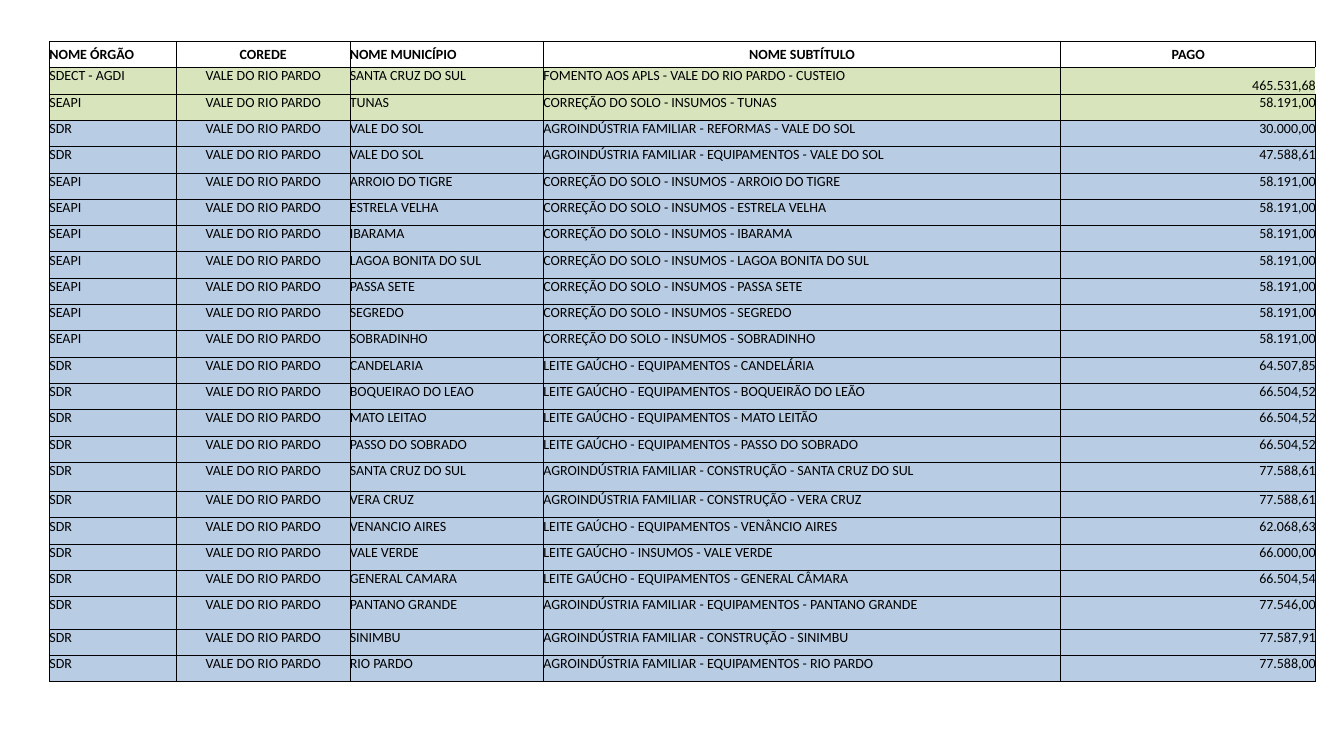
from lxml.etree import SubElement
from pptx import Presentation
from pptx.dml.color import RGBColor
from pptx.enum.text import MSO_ANCHOR, PP_ALIGN
from pptx.oxml.ns import qn
from pptx.util import Inches, Pt

BLACK, WHITE, GREEN, BLUE = "000000", "FFFFFF", "D7E4BC", "B8CCE4"
LEFT, CENTER, RIGHT = PP_ALIGN.LEFT, PP_ALIGN.CENTER, PP_ALIGN.RIGHT
TOP, MIDDLE, BOTTOM = MSO_ANCHOR.TOP, MSO_ANCHOR.MIDDLE, MSO_ANCHOR.BOTTOM

COREDE = "VALE DO RIO PARDO"
SOLO = "CORREÇÃO DO SOLO - INSUMOS - "
LEITE = "LEITE GAÚCHO - EQUIPAMENTOS - "
AGRO = "AGROINDÚSTRIA FAMILIAR - "

HEADERS = ["NOME ÓRGÃO", "COREDE", "NOME MUNICÍPIO", "NOME SUBTÍTULO", "PAGO"]
PAYMENTS = [
    ("SDECT - AGDI", "SANTA CRUZ DO SUL", "FOMENTO AOS APLS - VALE DO RIO PARDO - CUSTEIO", "465.531,68"),
    ("SEAPI", "TUNAS", SOLO + "TUNAS", "58.191,00"),
    ("SDR", "VALE DO SOL", AGRO + "REFORMAS - VALE DO SOL", "30.000,00"),
    ("SDR", "VALE DO SOL", AGRO + "EQUIPAMENTOS - VALE DO SOL", "47.588,61"),
    ("SEAPI", "ARROIO DO TIGRE", SOLO + "ARROIO DO TIGRE", "58.191,00"),
    ("SEAPI", "ESTRELA VELHA", SOLO + "ESTRELA VELHA", "58.191,00"),
    ("SEAPI", "IBARAMA", SOLO + "IBARAMA", "58.191,00"),
    ("SEAPI", "LAGOA BONITA DO SUL", SOLO + "LAGOA BONITA DO SUL", "58.191,00"),
    ("SEAPI", "PASSA SETE", SOLO + "PASSA SETE", "58.191,00"),
    ("SEAPI", "SEGREDO", SOLO + "SEGREDO", "58.191,00"),
    ("SEAPI", "SOBRADINHO", SOLO + "SOBRADINHO", "58.191,00"),
    ("SDR", "CANDELARIA", LEITE + "CANDELÁRIA", "64.507,85"),
    ("SDR", "BOQUEIRAO DO LEAO", LEITE + "BOQUEIRÃO DO LEÃO", "66.504,52"),
    ("SDR", "MATO LEITAO", LEITE + "MATO LEITÃO", "66.504,52"),
    ("SDR", "PASSO DO SOBRADO", LEITE + "PASSO DO SOBRADO", "66.504,52"),
    ("SDR", "SANTA CRUZ DO SUL", AGRO + "CONSTRUÇÃO - SANTA CRUZ DO SUL", "77.588,61"),
    ("SDR", "VERA CRUZ", AGRO + "CONSTRUÇÃO - VERA CRUZ", "77.588,61"),
    ("SDR", "VENANCIO AIRES", LEITE + "VENÂNCIO AIRES", "62.068,63"),
    ("SDR", "VALE VERDE", "LEITE GAÚCHO - INSUMOS - VALE VERDE", "66.000,00"),
    ("SDR", "GENERAL CAMARA", LEITE + "GENERAL CÂMARA", "66.504,54"),
    ("SDR", "PANTANO GRANDE", AGRO + "EQUIPAMENTOS - PANTANO GRANDE", "77.546,00"),
    ("SDR", "SINIMBU", AGRO + "CONSTRUÇÃO - SINIMBU", "77.587,91"),
    ("SDR", "RIO PARDO", AGRO + "EQUIPAMENTOS - RIO PARDO", "77.588,00"),
]
COL_WIDTHS = [1.26, 1.72, 1.92, 5.13, 2.53]
TABLE_HEIGHT = 6.36
TALL_ROWS = {16: 0.29, 21: 0.32}
GREEN_ROWS = 2


def rgb(color):
    return RGBColor.from_string(color)


class SlideBuilder:
    font, size, border = "Calibri", Pt(10), Pt(0.5)

    def __init__(self, prs):
        self.s = prs.slides.add_slide(prs.slide_layouts[6])

    def table(self, left, top, widths, heights):
        frame = self.s.shapes.add_table(
            len(heights), len(widths), Inches(left), Inches(top),
            Inches(sum(widths)), Inches(sum(heights)))
        tbl = frame.table
        tbl.first_row = tbl.horz_banding = False
        for col, width in zip(tbl.columns, widths):
            col.width = Inches(width)
        for row, height in zip(tbl.rows, heights):
            row.height = Inches(height)
        return tbl

    def cell(self, cell, text, fill, align, anchor=TOP, bold=False, sides="LRTB"):
        cell.margin_left = cell.margin_right = cell.margin_top = cell.margin_bottom = 0
        cell.vertical_anchor = anchor
        self.borders(cell, sides)
        cell.fill.solid()
        cell.fill.fore_color.rgb = rgb(fill)
        p = cell.text_frame.paragraphs[0]
        p.alignment = align
        r = p.add_run()
        r.text = text
        r.font.name, r.font.size, r.font.bold = self.font, self.size, bold
        r.font.color.rgb = rgb(BLACK)

    def borders(self, cell, sides):
        tc_pr = cell._tc.get_or_add_tcPr()
        for side in sides:
            ln = SubElement(tc_pr, qn(f"a:ln{side}"), w=str(self.border))
            SubElement(SubElement(ln, qn("a:solidFill")), qn("a:srgbClr"), val=BLACK)


def main():
    prs = Presentation()
    prs.slide_width, prs.slide_height = Inches(13.33), Inches(7.5)
    slide = SlideBuilder(prs)

    row_count = len(PAYMENTS) + 1
    row_height = (TABLE_HEIGHT - sum(TALL_ROWS.values())) / (row_count - len(TALL_ROWS))
    heights = [TALL_ROWS.get(i, row_height) for i in range(row_count)]
    tbl = slide.table(0.49, 0.41, COL_WIDTHS, heights)

    for col, (text, align) in enumerate(zip(HEADERS, [LEFT, CENTER, LEFT, CENTER, CENTER])):
        slide.cell(tbl.cell(0, col), text, WHITE, align, MIDDLE, bold=True)

    for row, (agency, city, subtitle, paid) in enumerate(PAYMENTS, 1):
        fill = GREEN if row <= GREEN_ROWS else BLUE
        for col, (text, align) in enumerate(zip(
                [agency, COREDE, city, subtitle, paid], [LEFT, CENTER, LEFT, LEFT, RIGHT])):
            first_paid = row == 1 and align == RIGHT
            slide.cell(tbl.cell(row, col), text, fill, align,
                       BOTTOM if first_paid else TOP,
                       sides="LTB" if first_paid else "LRTB")

    prs.save("out.pptx")


if __name__ == "__main__":
    main()
